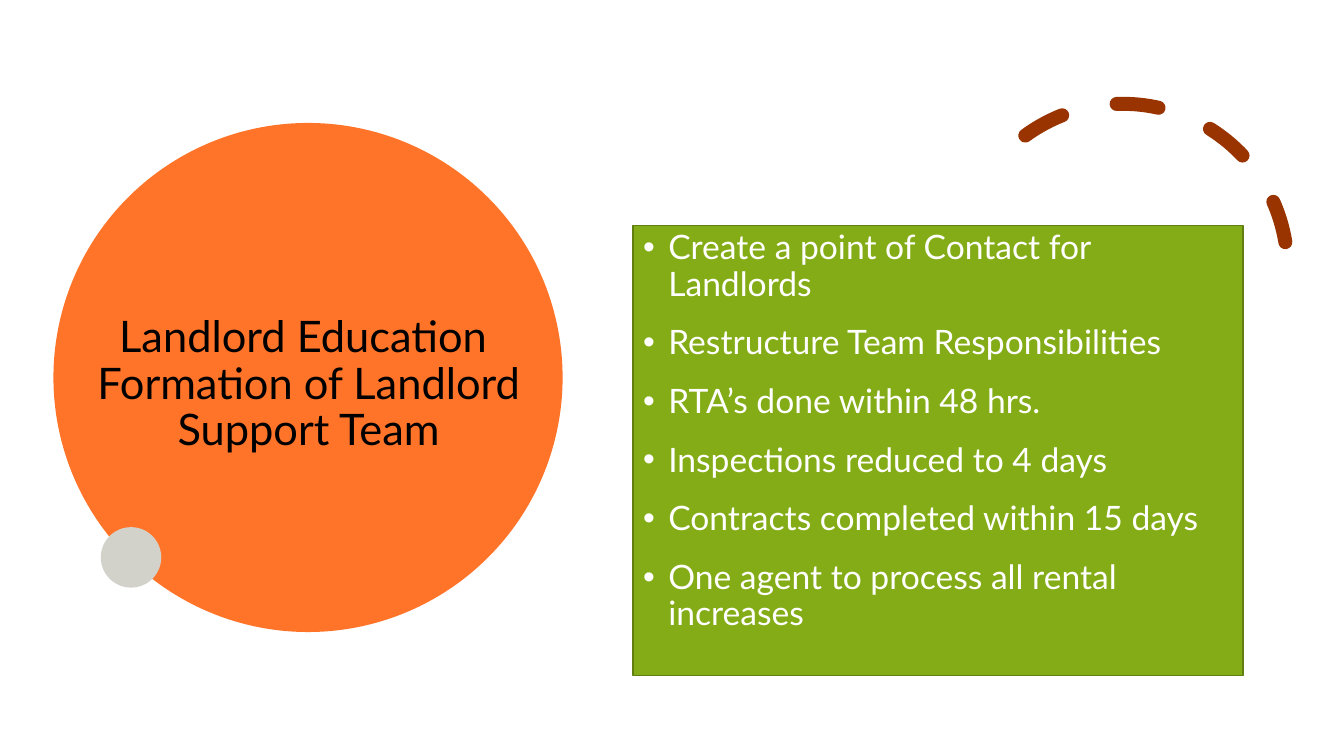
from pptx import Presentation
from pptx import util as u
from pptx.dml.color import RGBColor
from pptx.enum import dml, shapes, text
from pptx.oxml.ns import qn
from lxml import etree

PX = 9144  # EMU per px, 100 px to the inch
FONT = "Lato"
COLORS = {
    "orange": "FF7429",
    "rust": "993300",
    "grey": "D2D2CB",
    "green": "83AC16",
    "dark_green": "617F10",
    "black": "000000",
    "white": "FFFFFF",
}
TITLE_LINES = ["Landlord Education ", "Formation of Landlord Support Team"]
ACTIONS = [
    "Create a point of Contact for Landlords",
    "Restructure Team Responsibilities",
    "RTA’s done within 48 hrs.",
    "Inspections reduced to 4 days",
    "Contracts completed within 15 days",
    "One agent to process all rental increases",
]


def px(length):
    return u.Emu(length * PX)


def color(name):
    return RGBColor.from_string(COLORS[name])


def add_filled(slide, kind, box, fill, line=None):
    shape = slide.shapes.add_shape(kind, *map(px, box))
    shape.shadow.inherit = False
    shape.fill.solid()
    shape.fill.fore_color.rgb = color(fill)
    if line:
        shape.line.color.rgb = color(line)
        shape.line.width = u.Pt(1)
    else:
        shape.line.fill.background()
    return shape


def add_run(paragraph, words, size, ink):
    run = paragraph.add_run()
    run.text = words
    run.font.name = FONT
    run.font.size = u.Pt(size)
    run.font.color.rgb = color(ink)


def place_title(slide, box):
    title = slide.shapes.title
    title.left, title.top, title.width, title.height = map(px, box)
    frame = title.text_frame
    frame.word_wrap = True
    frame.auto_size = text.MSO_AUTO_SIZE.NONE
    frame.vertical_anchor = text.MSO_ANCHOR.MIDDLE
    frame.margin_bottom = px(52)  # lifts the text above the middle
    paragraph = frame.paragraphs[0]
    paragraph.alignment = text.PP_ALIGN.CENTER
    paragraph.line_spacing = 0.9
    for index, line in enumerate(TITLE_LINES):
        if index:
            paragraph.add_line_break()
        add_run(paragraph, line, 31, "black")
    # Bring the title in front of the circle
    slide.shapes._spTree.append(title._element)


def add_dashed_arc(slide, box):
    arc = slide.shapes.add_shape(shapes.MSO_SHAPE.ARC, *map(px, box))
    arc.shadow.inherit = False
    arc.adjustments[0] = 158.17
    arc.adjustments[1] = 17.81
    arc.rotation = 330.2
    arc.fill.background()
    arc.line.color.rgb = color("rust")
    arc.line.width = u.Pt(10)
    arc.line.dash_style = dml.MSO_LINE.DASH
    arc._element.spPr.find(qn("a:ln")).set("cap", "rnd")


def add_bullet(paragraph, words):
    paragraph.alignment = text.PP_ALIGN.LEFT
    paragraph.line_spacing = 0.9
    paragraph.space_before = u.Pt(10)
    paragraph.space_after = u.Pt(6)
    properties = paragraph._p.get_or_add_pPr()
    properties.set("marL", str(px(25)))
    properties.set("indent", str(-px(25)))
    etree.SubElement(properties, qn("a:buFont")).set("typeface", "Arial")
    etree.SubElement(properties, qn("a:buChar")).set("char", "•")
    add_run(paragraph, words, 24, "white")


def add_action_panel(slide, box):
    panel = add_filled(slide, shapes.MSO_SHAPE.RECTANGLE, box, "green", "dark_green")
    frame = panel.text_frame
    frame.word_wrap = True
    frame.vertical_anchor = text.MSO_ANCHOR.TOP
    for index, action in enumerate(ACTIONS):
        paragraph = frame.add_paragraph() if index else frame.paragraphs[0]
        add_bullet(paragraph, action)


def main():
    presentation = Presentation()
    presentation.slide_width = px(1333)
    presentation.slide_height = px(750)
    slide = presentation.slides.add_slide(presentation.slide_layouts[5])

    # Title in its circle
    add_filled(slide, shapes.MSO_SHAPE.OVAL, (53, 122, 505, 505), "orange")
    place_title(slide, (72, 183, 468, 445))

    # Accents
    add_dashed_arc(slide, (950, 103, 327, 327))
    add_filled(slide, shapes.MSO_SHAPE.OVAL, (100, 523, 60, 60), "grey")

    # Bulleted actions
    add_action_panel(slide, (628, 224, 605, 446))

    presentation.save("out.pptx")


if __name__ == "__main__":
    main()
